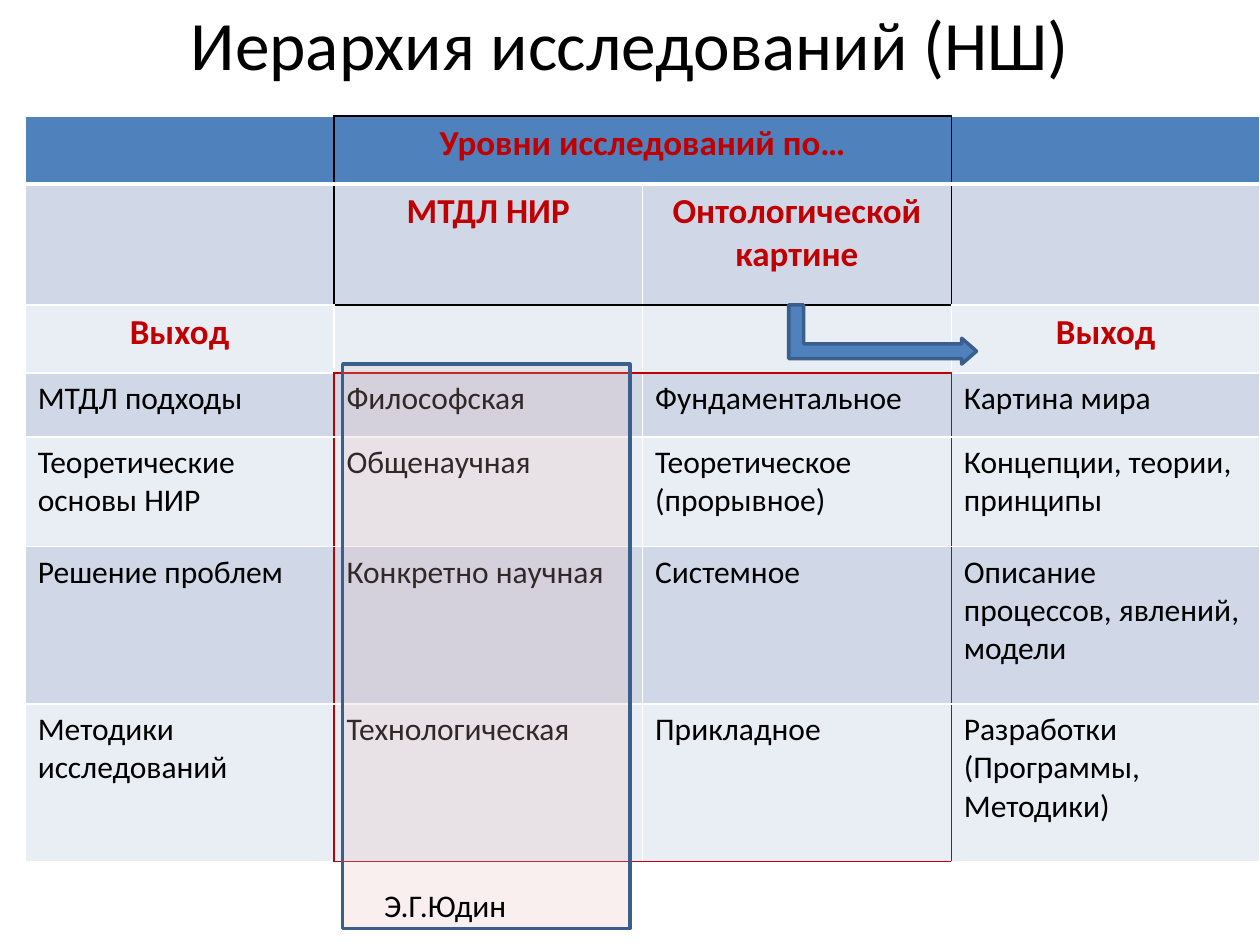
from pptx import Presentation
from pptx.dml.color import RGBColor as RGB
from pptx.enum.shapes import MSO_SHAPE as Kind
from pptx.enum.text import MSO_ANCHOR as Anchor, PP_ALIGN as Align
from pptx.oxml.ns import qn
from pptx.util import Inches, Pt
from lxml.etree import SubElement

HUES = {
    "head": "4F81BD", "dark": "D0D8E8", "light": "E9EDF4",
    "red": "C00000", "black": "000000", "white": "FFFFFF",
    "edge": "3A5F8C", "pink": "E6B9B8",
}
FONT = "Calibri"
LEFT, TOP, COL = 0.2, 0.92, 2.45
HEIGHTS = [0.54, 0.96, 0.54, 0.51, 0.87, 1.25, 1.25]
ROWS = [
    ["", "Уровни исследований по…", "", ""],
    ["", "МТДЛ НИР", "Онтологической картине", ""],
    ["Выход", "", "", "Выход"],
    ["МТДЛ подходы", "Философская", "Фундаментальное", "Картина мира"],
    ["Теоретические основы НИР", "Общенаучная", "Теоретическое (прорывное)",
     "Концепции, теории, принципы"],
    ["Решение проблем", "Конкретно научная", "Системное",
     "Описание процессов, явлений, модели"],
    ["Методики исследований", "Технологическая", "Прикладное",
     "Разработки (Программы, Методики)"],
]
HEADS = 3  # rows with bold red text
# Outlined blocks of the middle columns: colour and rows
FRAMES = [("black", range(0, 2)), ("red", range(3, 7))]
SIDES = {"L": (0, -1), "R": (0, 1), "T": (-1, 0), "B": (1, 0)}


def hue(name):
    return RGB.from_string(HUES[name])


def write(frame, text, size, color="black", bold=False, align=Align.LEFT):
    para = frame.paragraphs[0]
    para.alignment = align
    run = para.add_run()
    run.text = text
    font = run.font
    font.name, font.size, font.bold = FONT, Pt(size), bold
    font.color.rgb = hue(color)


def rule(row, col, side):
    """Colour and width of one side of a cell."""
    down, right = SIDES[side]
    for color, span in FRAMES:
        here = row in span and col in (1, 2)
        near = row + down in span and col + right in (1, 2)
        if here != near:
            return color, 1
    header = (row, side) in ((0, "B"), (1, "T"))
    return "white", 3 if header else 1


def border(cell, row, col):
    props = cell._tc.get_or_add_tcPr()
    for side in SIDES:
        color, width = rule(row, col, side)
        line = SubElement(props, qn(f"a:ln{side}"), w=str(Pt(width)))
        fill = SubElement(line, qn("a:solidFill"))
        SubElement(fill, qn("a:srgbClr"), val=HUES[color])


def add_grid(slide):
    wide, high = COL * len(ROWS[0]), sum(HEIGHTS)
    table = slide.shapes.add_table(
        len(ROWS), len(ROWS[0]), Inches(LEFT), Inches(TOP),
        Inches(wide), Inches(high)).table
    for col in table.columns:
        col.width = Inches(COL)
    for r, (texts, height) in enumerate(zip(ROWS, HEIGHTS)):
        table.rows[r].height = Inches(height)
        back = "head" if r == 0 else "dark" if r % 2 else "light"
        for c, text in enumerate(texts):
            cell = table.cell(r, c)
            border(cell, r, c)
            cell.fill.solid()
            cell.fill.fore_color.rgb = hue(back)
            if text and r < HEADS:
                write(cell.text_frame, text, 20, "red", True, Align.CENTER)
            elif text:
                write(cell.text_frame, text, 18)
    table.cell(0, 1).merge(table.cell(0, 2))


def add_block(slide, kind, box, color):
    block = slide.shapes.add_shape(kind, *map(Inches, box))
    block.shadow.inherit = False
    block.fill.solid()
    block.fill.fore_color.rgb = hue(color)
    block.line.color.rgb = hue("edge")
    block.line.width = Pt(2)
    return block


def main():
    deck = Presentation()
    deck.slide_width, deck.slide_height = Inches(10), Inches(7.5)
    slide = deck.slides.add_slide(deck.slide_layouts[5])

    # Title
    title = slide.shapes.title
    title.left, title.top = Inches(0.5), Inches(0)
    title.width, title.height = Inches(9), Inches(0.68)
    title.text_frame.vertical_anchor = Anchor.MIDDLE
    write(title.text_frame, "Иерархия исследований (НШ)", 39.6,
          align=Align.CENTER)

    add_grid(slide)

    # Arrow from the ontology column to its output
    arrow = add_block(slide, Kind.BENT_UP_ARROW, (6.77, 1.91, 0.47, 1.49),
                      "head")
    arrow.rotation = 90
    for i, value in enumerate((0.25, 0.218, 0.25)):
        arrow.adjustments[i] = value

    # Clear panel over the methodology column
    panel = add_block(slide, Kind.RECTANGLE, (2.72, 2.89, 2.28, 4.48), "pink")
    tint = panel._element.spPr.find(qn("a:solidFill"))[0]
    SubElement(tint, qn("a:alpha"), val="22000")

    # Author of the scheme
    note = slide.shapes.add_textbox(
        Inches(2.95), Inches(6.98), Inches(1.81), Inches(0.4))
    note.text_frame.word_wrap = True
    write(note.text_frame, "Э.Г.Юдин", 18)

    deck.save("out.pptx")


if __name__ == "__main__":
    main()
